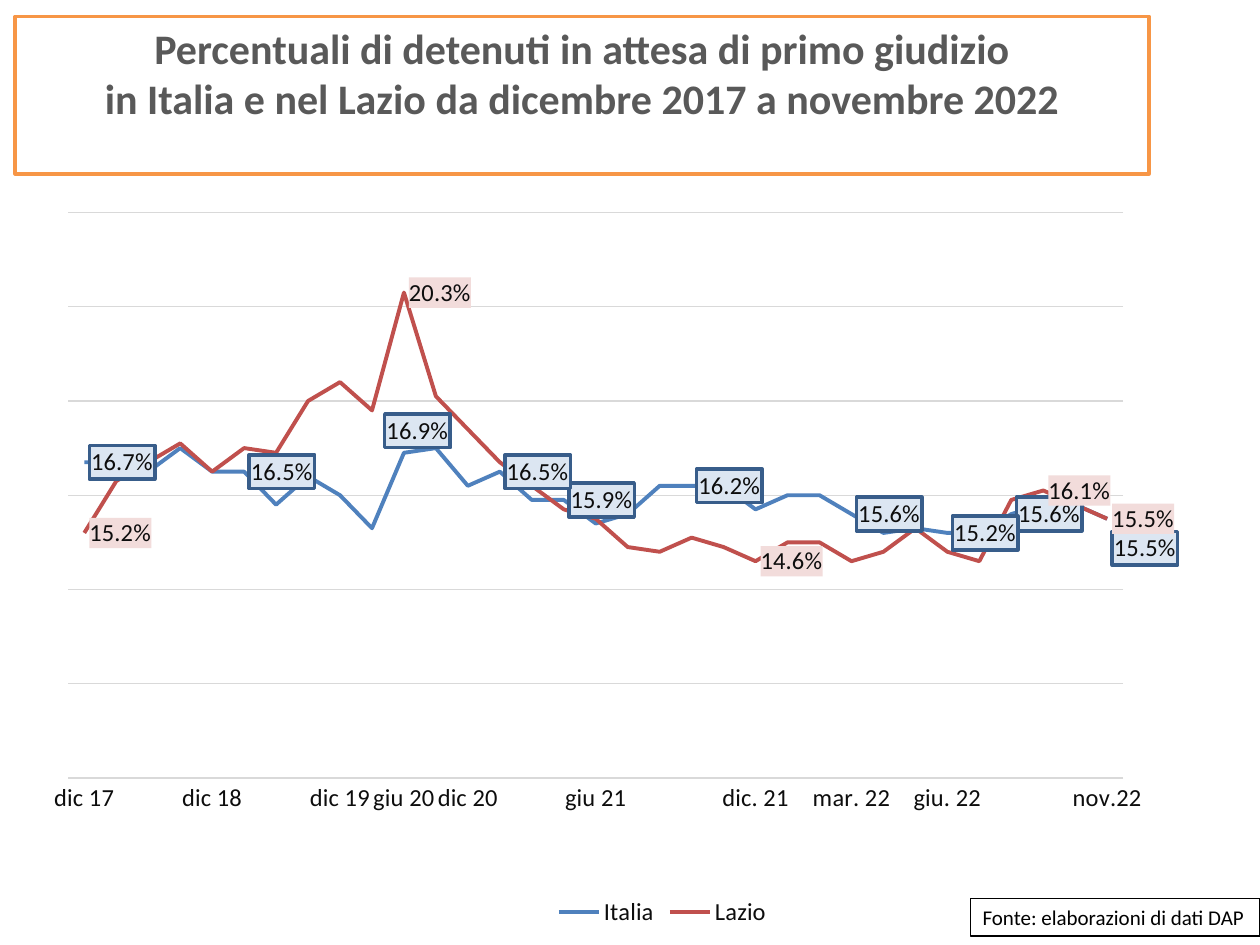
import pptx
import pptx.chart.data
import pptx.dml.color
import pptx.enum.chart
import pptx.enum.shapes
import pptx.enum.text
import pptx.oxml
import pptx.oxml.ns
import pptx.util

COLUMNS, ROWS = 100, 75
FONT = "Calibri"
COLORS = {
    "white": "FFFFFF", "black": "000000", "title": "595959", "frame": "F79646",
    "text": "0D0D0D", "grid": "D9D9D9", "Italia": "4F81BD", "Lazio": "C0504D",
    "Italia label": "DCE6F2", "Italia border": "385D8A", "Lazio label": "F2DCDB",
}
CATEGORY_COUNT = 33
CATEGORIES = {0: "nov.22", 5: "giu. 22", 8: "mar. 22", 11: "dic. 21", 16: "giu 21",
              20: "dic 20", 22: "giu 20", 24: "dic 19", 28: "dic 18", 32: "dic 17"}
PERCENTAGES = {
    "Italia": [15.5, 15.8, 15.8, 15.6, 15.2, 15.2, 15.3, 15.2, 15.6, 16.0, 16.0,
               15.7, 16.2, 16.2, 16.2, 15.6, 15.4, 15.9, 15.9, 16.5, 16.2, 17.0,
               16.9, 15.3, 16.0, 16.4, 15.8, 16.5, 16.5, 17.0, 16.5, 16.7, 16.7],
    "Lazio": [15.5, 15.8, 16.1, 15.9, 14.6, 14.8, 15.3, 14.8, 14.6, 15.0, 15.0,
              14.6, 14.9, 15.1, 14.8, 14.9, 15.5, 15.7, 16.2, 16.7, 17.4, 18.1,
              20.3, 17.8, 18.4, 18.0, 16.9, 17.0, 16.5, 17.1, 16.7, 16.3, 15.2],
}
LABELED_POINTS = {"Italia": [0, 3, 5, 8, 13, 17, 19, 22, 27, 32],
                  "Lazio": [0, 2, 11, 22, 32]}
LABEL_OFFSETS = {("Italia", 0): (0, 0.04), ("Italia", 22): (-0.02, -0.03)}
PLOT_AREA = {"x": 0.01, "y": 0.02, "w": 0.87, "h": 0.77}


def rgb(name):
    return pptx.dml.color.RGBColor.from_string(COLORS[name])


def set_font(font, size, color, bold=False):
    font.name, font.size, font.bold = FONT, pptx.util.Pt(size), bold
    font.color.rgb = rgb(color)


def set_line(line, color, width):
    line.color.rgb = rgb(color)
    line.width = pptx.util.Pt(width)


def chart_xml(content):
    namespaces = pptx.oxml.ns.nsdecls("c", "a")
    return pptx.oxml.parse_xml("<root %s>%s</root>" % (namespaces, content))[0]


def add_framed_text(slide, box, text, line, size, color, bold=False, centered=False):
    shape = slide.shapes.add_shape(pptx.enum.shapes.MSO_SHAPE.RECTANGLE, *box)
    shape.shadow.inherit = False
    shape.fill.solid()
    shape.fill.fore_color.rgb = rgb("white")
    set_line(shape.line, *line)
    frame = shape.text_frame
    frame.word_wrap = centered
    frame.vertical_anchor = pptx.enum.text.MSO_ANCHOR.TOP
    frame.text = text
    paragraph = frame.paragraphs[0]
    alignment = pptx.enum.text.PP_ALIGN
    paragraph.alignment = alignment.CENTER if centered else alignment.LEFT
    set_font(paragraph.font, size, color, bold)


def label_point(series, index):
    label = series.points[index].data_label
    set_font(label.font, 14, "text")
    label.position = pptx.enum.chart.XL_LABEL_POSITION.RIGHT
    border = ""
    if series.name == "Italia":
        border = ('<a:ln w="25400"><a:solidFill><a:srgbClr val="%s"/></a:solidFill></a:ln>'
                  % COLORS["Italia border"])
    fill = COLORS[series.name + " label"]
    element = series.data_labels._element.xpath('c:dLbl[c:idx/@val="%d"]' % index)[0]
    text_properties = element.find(pptx.oxml.ns.qn("c:txPr"))
    text_properties.addprevious(chart_xml(
        '<c:spPr><a:solidFill><a:srgbClr val="%s"/></a:solidFill>%s</c:spPr>' % (fill, border)))
    if (series.name, index) in LABEL_OFFSETS:
        element[0].addnext(chart_xml(
            '<c:layout><c:manualLayout><c:x val="%s"/><c:y val="%s"/>'
            '</c:manualLayout></c:layout>' % LABEL_OFFSETS[series.name, index]))


def style_axes(chart):
    category_axis, value_axis = chart.category_axis, chart.value_axis
    category_axis.reverse_order = True
    category_axis.major_tick_mark = pptx.enum.chart.XL_TICK_MARK.NONE
    set_font(category_axis.tick_labels.font, 14, "text")
    set_line(category_axis.format.line, "grid", 0.75)
    category_axis._element.find(pptx.oxml.ns.qn("c:noMultiLvlLbl")).addprevious(
        chart_xml('<c:tickLblSkip val="1"/>'))
    body = category_axis._element.find(".//" + pptx.oxml.ns.qn("a:bodyPr"))
    body.set("rot", "-60000000")
    body.set("vert", "horz")
    value_axis.minimum_scale, value_axis.maximum_scale = 0.1, 0.22
    value_axis.major_unit = 0.02
    value_axis.has_major_gridlines = True
    set_line(value_axis.major_gridlines.format.line, "grid", 0.75)
    value_axis.visible = False


def place_plot_area(chart):
    plot_area = chart._chartSpace.chart.plotArea
    for layout in plot_area.findall(pptx.oxml.ns.qn("c:layout")):
        plot_area.remove(layout)
    sizes = "".join('<c:%s val="%s"/>' % item for item in PLOT_AREA.items())
    plot_area.insert(0, chart_xml(
        '<c:layout><c:manualLayout><c:layoutTarget val="inner"/><c:xMode val="edge"/>'
        '<c:yMode val="edge"/>' + sizes + '</c:manualLayout></c:layout>'))


def add_percentage_chart(slide, box):
    data = pptx.chart.data.CategoryChartData(number_format="0.0%")
    data.categories = [CATEGORIES.get(index, "") for index in range(CATEGORY_COUNT)]
    for name, percentages in PERCENTAGES.items():
        data.add_series(name, [round(value / 100, 3) for value in percentages])
    chart = slide.shapes.add_chart(pptx.enum.chart.XL_CHART_TYPE.LINE, *box, data).chart
    set_font(chart.font, 14, "text")
    chart.has_title = False
    chart.has_legend = True
    chart.legend.position = pptx.enum.chart.XL_LEGEND_POSITION.BOTTOM
    chart.legend.include_in_layout = False
    set_font(chart.legend.font, 14, "text")
    style_axes(chart)
    place_plot_area(chart)
    chart.plots[0].vary_by_categories = False
    for series in chart.plots[0].series:
        series.smooth = False
        series.marker.style = pptx.enum.chart.XL_MARKER_STYLE.NONE
        set_line(series.format.line, series.name, 2.25)
        series.data_labels.show_value = False
        for index in LABELED_POINTS[series.name]:
            label_point(series, index)


def main():
    presentation = pptx.Presentation()
    presentation.slide_width = pptx.util.Inches(10)
    presentation.slide_height = pptx.util.Inches(7.5)
    slide = presentation.slides.add_slide(presentation.slide_layouts[6])

    def grid_box(left, top, width, height):
        column = presentation.slide_width / COLUMNS
        row = presentation.slide_height / ROWS
        return [int(length) for length in
                (left * column, top * row, width * column, height * row)]

    add_framed_text(slide, grid_box(1.2, 1.3, 90, 12.5),
                    "Percentuali di detenuti in attesa di primo giudizio\v"
                    "in Italia e nel Lazio da dicembre 2017 a novembre 2022",
                    ("frame", 2), 24, "title", bold=True, centered=True)
    add_framed_text(slide, grid_box(77, 71.3, 23, 3), "Fonte: elaborazioni di dati DAP",
                    ("black", 0.75), 12, "black")
    add_percentage_chart(slide, grid_box(4.3, 15.7, 96.4, 58.3))
    presentation.save("out.pptx")


if __name__ == "__main__":
    main()
